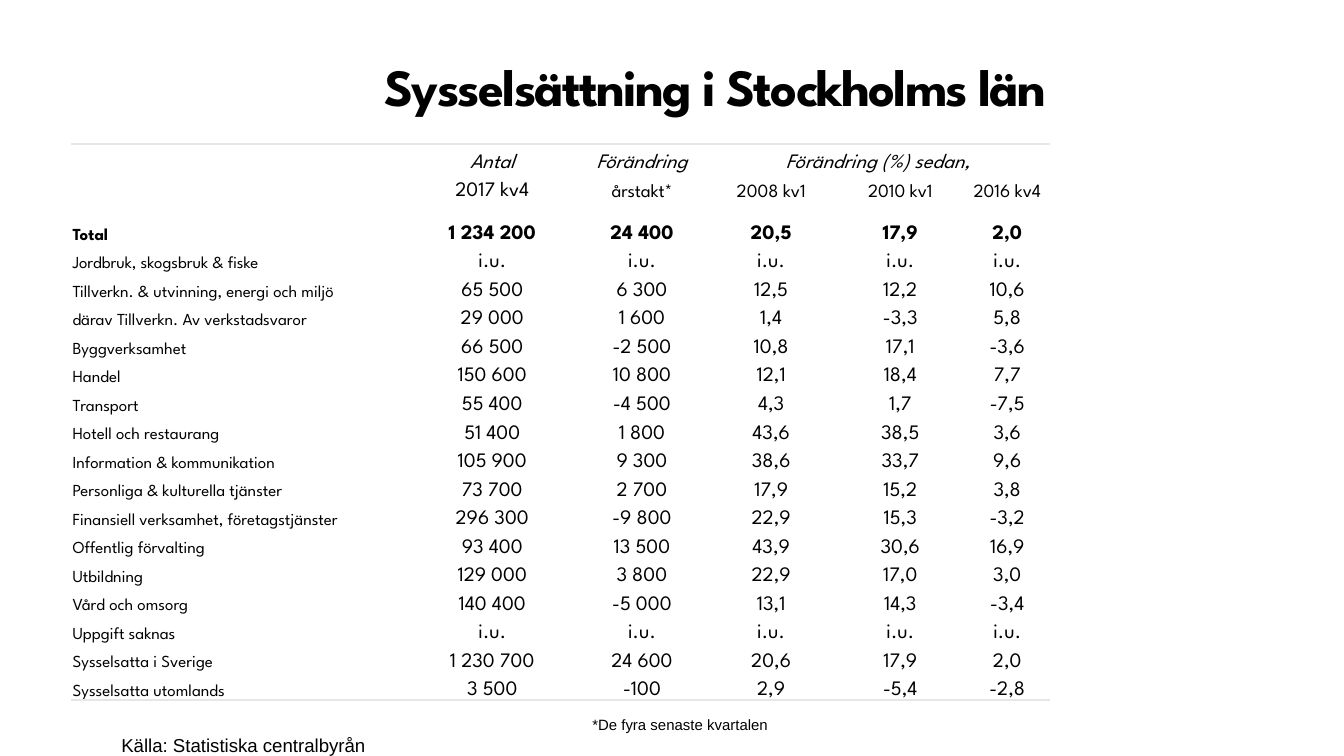
from lxml.etree import SubElement
from pptx import Presentation
from pptx.dml.color import RGBColor
from pptx.enum.text import MSO_ANCHOR as Anchor, MSO_AUTO_SIZE as AutoSize, PP_ALIGN as Align
from pptx.oxml import parse_xml
from pptx.oxml.ns import nsdecls, qn
from pptx.util import Pt

COLORS = {"text": "000000", "rule": "E6E6E6"}
HEADING_FONT, NOTE_FONT = "League Spartan", "Arial"
PLAIN_TABLE_STYLE = "{2D5ABB26-0587-4C30-8999-92F81FD0307C}"

COLUMN_WIDTHS = [180, 91.2, 69.2, 69.2, 69.2, 45.4]
ROW_HEIGHT, TOTAL_ROW_HEIGHT = 15.29, 22.8
TOTAL_ROW = 2
ROWS = [
    ["", "Antal", "Förändring", "Förändring (%) sedan,", "", ""],
    ["", "2017 kv4", "årstakt*", "2008 kv1", "2010 kv1", "2016 kv4"],
    ["Total", "1 234 200", "24 400", "20,5", "17,9", "2,0"],
    ["Jordbruk, skogsbruk & fiske"] + ["i.u."] * 5,
    ["Tillverkn. & utvinning, energi och miljö", "65 500", "6 300", "12,5", "12,2", "10,6"],
    ["därav Tillverkn. Av verkstadsvaror", "29 000", "1 600", "1,4", "-3,3", "5,8"],
    ["Byggverksamhet", "66 500", "-2 500", "10,8", "17,1", "-3,6"],
    ["Handel", "150 600", "10 800", "12,1", "18,4", "7,7"],
    ["Transport", "55 400", "-4 500", "4,3", "1,7", "-7,5"],
    ["Hotell och restaurang", "51 400", "1 800", "43,6", "38,5", "3,6"],
    ["Information & kommunikation", "105 900", "9 300", "38,6", "33,7", "9,6"],
    ["Personliga & kulturella tjänster", "73 700", "2 700", "17,9", "15,2", "3,8"],
    ["Finansiell verksamhet, företagstjänster", "296 300", "-9 800", "22,9", "15,3", "-3,2"],
    ["Offentlig förvalting", "93 400", "13 500", "43,9", "30,6", "16,9"],
    ["Utbildning", "129 000", "3 800", "22,9", "17,0", "3,0"],
    ["Vård och omsorg", "140 400", "-5 000", "13,1", "14,3", "-3,4"],
    ["Uppgift saknas"] + ["i.u."] * 5,
    ["Sysselsatta i Sverige", "1 230 700", "24 600", "20,6", "17,9", "2,0"],
    ["Sysselsatta utomlands", "3 500", "-100", "2,9", "-5,4", "-2,8"],
]


def add_run(paragraph, text, size, font_name, bold=False, italic=False):
    run = paragraph.add_run()
    run.text = text
    font = run.font
    font.size, font.name, font.bold, font.italic = Pt(size), font_name, bold, italic
    font.color.rgb = RGBColor.from_string(COLORS["text"])
    return run


def clear_margins(frame):
    frame.margin_left = frame.margin_right = frame.margin_top = frame.margin_bottom = 0


def add_title(slide, text):
    title = slide.shapes.title
    title.left, title.top, title.width, title.height = Pt(206), Pt(28.8), Pt(662.4), Pt(57.6)
    frame = title.text_frame
    clear_margins(frame)
    frame.auto_size = AutoSize.NONE
    frame.vertical_anchor = Anchor.TOP
    paragraph = frame.paragraphs[0]
    paragraph.alignment = Align.LEFT
    run = add_run(paragraph, text, 28, HEADING_FONT, bold=True)
    run.font._element.set("spc", "-90")


def add_note(slide, left, top, width, text, size):
    box = slide.shapes.add_textbox(Pt(left), Pt(top), Pt(width), Pt(24))
    frame = box.text_frame
    clear_margins(frame)
    frame.word_wrap = True
    paragraph = frame.paragraphs[0]
    paragraph.line_spacing = Pt(24)
    add_run(paragraph, text, size, NOTE_FONT)


def add_border(cell, side):
    line = parse_xml(
        f'<a:{side} {nsdecls("a")} w="12700"><a:solidFill>'
        f'<a:srgbClr val="{COLORS["rule"]}"/></a:solidFill></a:{side}>'
    )
    cell._tc.get_or_add_tcPr().insert(0, line)


def text_size(row, column):
    if column == 0:
        return 9
    return 10 if row == 1 and column > 1 else 11


def fill_cell(cell, row, column, text):
    cell.fill.background()
    cell.vertical_anchor = Anchor.BOTTOM
    cell.margin_left = cell.margin_right = cell.margin_top = Pt(0.72)
    cell.margin_bottom = 0
    paragraph = cell.text_frame.paragraphs[0]
    paragraph.alignment = Align.CENTER if column else Align.LEFT
    size = text_size(row, column)
    if text:
        add_run(paragraph, text, size, HEADING_FONT, bold=row == TOTAL_ROW, italic=row == 0)
    else:
        # Keeps an empty cell from stretching its row
        SubElement(paragraph._p, qn("a:endParaRPr")).set("sz", str(size * 100))


def add_employment_table(slide):
    heights = [TOTAL_ROW_HEIGHT if i == TOTAL_ROW else ROW_HEIGHT for i in range(len(ROWS))]
    table = slide.shapes.add_table(
        len(ROWS), len(COLUMN_WIDTHS), Pt(38.16), Pt(77.3),
        Pt(sum(COLUMN_WIDTHS)), Pt(sum(heights)),
    ).table
    table.first_row = table.horz_banding = False
    table._tbl.tblPr.find(qn("a:tableStyleId")).text = PLAIN_TABLE_STYLE
    for column, width in zip(table.columns, COLUMN_WIDTHS):
        column.width = Pt(width)
    for row, height in zip(table.rows, heights):
        row.height = Pt(height)
    for i, values in enumerate(ROWS):
        for j, text in enumerate(values):
            fill_cell(table.cell(i, j), i, j, text)
    # Rules above the header and below the last row
    for j in range(len(COLUMN_WIDTHS)):
        add_border(table.cell(0, j), "lnT")
        add_border(table.cell(len(ROWS) - 1, j), "lnB")
    table.cell(0, 3).merge(table.cell(0, 5))


def main():
    presentation = Presentation()
    presentation.slide_width, presentation.slide_height = Pt(720), Pt(405)
    slide = presentation.slides.add_slide(presentation.slide_layouts[5])

    add_title(slide, "Sysselsättning i Stockholms län")
    # Source and footnote around the table
    add_note(slide, 65, 381.4, 140, "Källa: Statistiska centralbyrån", 10)
    add_employment_table(slide)
    add_note(slide, 317.3, 368.9, 105, "*De fyra senaste kvartalen", 8)

    presentation.save("out.pptx")


if __name__ == "__main__":
    main()
